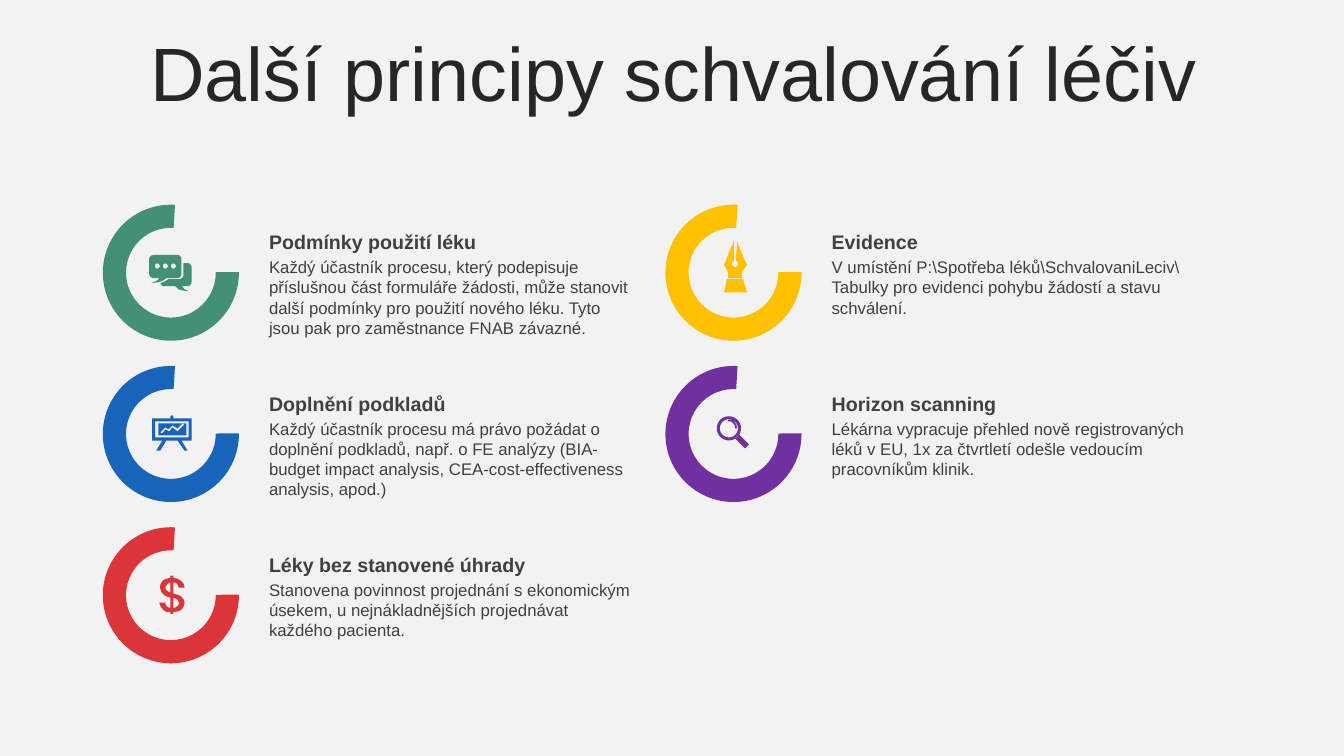
from dataclasses import dataclass
from math import cos, pi, sin

from pptx import Presentation
from pptx.dml.color import RGBColor
from pptx.enum.shapes import MSO_SHAPE
from pptx.enum.text import MSO_ANCHOR, MSO_AUTO_SIZE, PP_ALIGN
from pptx.util import Inches, Pt


@dataclass(frozen=True)
class Theme:
    """Colours, type and grid of the slide, lengths in inches."""
    font: str = "Arial"
    background: str = "F2F2F2"
    title_ink: str = "262626"
    ink: str = "404040"
    green: str = "449074"
    blue: str = "1764B9"
    red: str = "DC3539"
    yellow: str = "FFC000"
    purple: str = "7030A0"
    title_size: int = 54
    heading_size: int = 14
    body_size: int = 12
    left: float = 1.02
    top: float = 2.03
    column: float = 5.58
    row: float = 1.6
    ring: float = 1.35
    text_indent: float = 1.55
    text_width: float = 3.83


THEME = Theme()


def rect(left, top, right, bottom):
    """Return the corners of a rectangle."""
    return [(left, top), (right, top), (right, bottom), (left, bottom)]


def circle(x, y, radius, steps=36):
    """Return the points of a circle."""
    turns = [2 * pi * step / steps for step in range(steps)]
    return [(x + radius * cos(turn), y + radius * sin(turn)) for turn in turns]


def flatten(contour, steps=8):
    """Turn six-number Bézier entries of a contour into points."""
    points = []
    for entry in contour:
        if len(entry) == 2:
            points.append(entry)
            continue
        xs, ys = ((points[-1][axis], *entry[axis::2]) for axis in (0, 1))
        for step in range(1, steps + 1):
            t = step / steps
            weights = ((1 - t) ** 3, 3 * t * (1 - t) ** 2, 3 * t * t * (1 - t), t ** 3)
            points.append(tuple(sum(w * v for w, v in zip(weights, values))
                                for values in (xs, ys)))
    return points


SPEECH = [
    *[circle(x, 0.61, 0.025) for x in (0.54, 0.62, 0.7)],
    [(0.8, 0.58), (0.84, 0.58), (0.86, 0.58, 0.88, 0.6, 0.88, 0.62), (0.88, 0.77),
     (0.88, 0.79, 0.86, 0.81, 0.84, 0.81), (0.79, 0.81),
     (0.8, 0.83, 0.8, 0.84, 0.85, 0.86), (0.77, 0.85, 0.75, 0.85, 0.72, 0.81),
     (0.61, 0.81), (0.59, 0.81, 0.58, 0.8, 0.57, 0.78),
     (0.6, 0.77, 0.62, 0.76, 0.65, 0.74), (0.75, 0.74),
     (0.78, 0.74, 0.8, 0.72, 0.8, 0.7)],
    [(0.51, 0.5), (0.74, 0.5), (0.76, 0.5, 0.78, 0.52, 0.78, 0.54), (0.78, 0.69),
     (0.78, 0.71, 0.76, 0.73, 0.74, 0.73), (0.63, 0.73),
     (0.58, 0.77, 0.56, 0.77, 0.48, 0.78), (0.53, 0.76, 0.54, 0.76, 0.56, 0.73),
     (0.51, 0.73), (0.48, 0.73, 0.46, 0.71, 0.46, 0.69), (0.46, 0.54),
     (0.46, 0.52, 0.48, 0.5, 0.51, 0.5)],
]
BOARD = [
    [(0.57, 0.66), (0.62, 0.61), (0.65, 0.63), (0.69, 0.59), (0.74, 0.62),
     (0.79, 0.57), (0.81, 0.58), (0.74, 0.65), (0.69, 0.61), (0.66, 0.65),
     (0.62, 0.63), (0.59, 0.67)],
    rect(0.55, 0.57, 0.83, 0.69),
    rect(0.52, 0.55, 0.85, 0.71),
    [(0.69, 0.49), (0.7, 0.49, 0.7, 0.5, 0.7, 0.5), (0.7, 0.52), (0.88, 0.52),
     (0.88, 0.74), (0.78, 0.74), (0.84, 0.84), (0.81, 0.84), (0.74, 0.74),
     (0.63, 0.74), (0.57, 0.84), (0.53, 0.84), (0.59, 0.74), (0.49, 0.74),
     (0.49, 0.52), (0.67, 0.52), (0.67, 0.5), (0.67, 0.5, 0.68, 0.49, 0.69, 0.49)],
]
DOLLAR = [
    [(0.7, 0.7), (0.7, 0.8), (0.71, 0.8, 0.72, 0.8, 0.73, 0.79),
     (0.75, 0.78, 0.76, 0.76, 0.75, 0.74), (0.75, 0.72, 0.73, 0.71, 0.7, 0.7)],
    [(0.67, 0.55), (0.66, 0.55, 0.65, 0.55, 0.65, 0.56),
     (0.63, 0.57, 0.62, 0.59, 0.62, 0.61), (0.63, 0.63, 0.65, 0.64, 0.67, 0.65)],
    [(0.67, 0.48), (0.7, 0.48), (0.7, 0.5), (0.72, 0.51, 0.73, 0.51, 0.74, 0.51),
     (0.78, 0.53, 0.81, 0.56, 0.81, 0.6), (0.75, 0.6),
     (0.75, 0.58, 0.74, 0.56, 0.72, 0.55), (0.7, 0.55), (0.7, 0.66),
     (0.75, 0.67, 0.79, 0.68, 0.81, 0.74), (0.81, 0.77, 0.8, 0.81, 0.76, 0.83),
     (0.74, 0.84, 0.72, 0.84, 0.7, 0.84), (0.7, 0.86), (0.67, 0.86), (0.67, 0.84),
     (0.66, 0.84, 0.64, 0.84, 0.63, 0.84), (0.59, 0.82, 0.57, 0.79, 0.56, 0.75),
     (0.62, 0.75), (0.62, 0.77, 0.63, 0.79, 0.66, 0.8), (0.67, 0.8), (0.67, 0.7),
     (0.63, 0.69, 0.58, 0.67, 0.57, 0.61), (0.56, 0.58, 0.58, 0.54, 0.61, 0.52),
     (0.63, 0.51, 0.65, 0.51, 0.67, 0.5)],
]
PEN = [
    [(0.77, 0.74), (0.61, 0.74), (0.58, 0.87), (0.81, 0.87)],
    [(0.71, 0.36), (0.71, 0.43, 0.7, 0.49, 0.7, 0.56),
     (0.71, 0.56, 0.72, 0.57, 0.72, 0.59), (0.72, 0.6, 0.71, 0.62, 0.69, 0.62),
     (0.68, 0.62, 0.66, 0.6, 0.66, 0.59), (0.66, 0.57, 0.67, 0.56, 0.68, 0.56),
     (0.68, 0.36), (0.58, 0.6), (0.62, 0.65, 0.63, 0.69, 0.62, 0.73), (0.76, 0.73),
     (0.75, 0.68, 0.76, 0.66, 0.81, 0.6), (0.77, 0.52, 0.74, 0.44, 0.71, 0.36)],
]
MAGNIFIER = [
    circle(0.63, 0.62, 0.12),
    circle(0.63, 0.62, 0.09),
    [(0.62, 0.54), (0.64, 0.53, 0.67, 0.54, 0.68, 0.55),
     (0.7, 0.57, 0.71, 0.59, 0.71, 0.62), (0.69, 0.62),
     (0.69, 0.6, 0.69, 0.58, 0.67, 0.57), (0.66, 0.55, 0.64, 0.55, 0.62, 0.55)],
    [(0.73, 0.68), (0.82, 0.77), (0.83, 0.78, 0.83, 0.79, 0.82, 0.79), (0.8, 0.81),
     (0.8, 0.82, 0.79, 0.82, 0.78, 0.81), (0.69, 0.72)],
]


def paint(shape, color):
    """Give a shape a flat fill without line or shadow."""
    shape.shadow.inherit = False
    shape.fill.solid()
    shape.fill.fore_color.rgb = RGBColor.from_string(color)
    shape.line.fill.background()


def write(frame, text, size, color, bold=False):
    """Put text in a frame and format its runs."""
    frame.text = text
    frame.word_wrap = True
    for paragraph in frame.paragraphs:
        for run in paragraph.runs:
            run.font.name = THEME.font
            run.font.size = Pt(size)
            run.font.bold = bold
            run.font.color.rgb = RGBColor.from_string(color)


def add_title(slide, text):
    """Place and format the title."""
    title = slide.shapes.title
    title.left, title.top, title.width, title.height = map(Inches, (0.35, 0.37, 12.66, 0.79))
    frame = title.text_frame
    write(frame, text, THEME.title_size, THEME.title_ink)
    frame.auto_size = MSO_AUTO_SIZE.NONE
    frame.vertical_anchor = MSO_ANCHOR.MIDDLE
    frame.paragraphs[0].alignment = PP_ALIGN.CENTER
    frame.paragraphs[0].line_spacing = 0.9


def add_ring(slide, left, top, color):
    """Draw an open ring."""
    ring = slide.shapes.add_shape(MSO_SHAPE.BLOCK_ARC, Inches(left), Inches(top),
                                  Inches(THEME.ring), Inches(THEME.ring))
    ring.rotation = 270
    for index, value in enumerate((53.67, 2.07, 0.17)):
        ring.adjustments[index] = value
    paint(ring, color)


def add_icon(slide, left, top, contours, color):
    """Draw an icon from contours measured from the ring's corner."""
    outlines = [[(Inches(left + x), Inches(top + y)) for x, y in flatten(contour)]
                for contour in contours]
    builder = slide.shapes.build_freeform(*outlines[0][0])
    for index, outline in enumerate(outlines):
        if index:
            builder.move_to(*outline[0])
        builder.add_line_segments(outline[1:], close=True)
    paint(builder.convert_to_shape(), color)


def add_text(slide, left, top, height, text, size, bold=False):
    """Add a wrapped text box and return its frame."""
    box = slide.shapes.add_textbox(*map(Inches, (left, top, THEME.text_width, height)))
    write(box.text_frame, text, size, THEME.ink, bold)
    return box.text_frame


def add_principle(slide, column, row, color, icon, heading, body):
    """Add one principle with ring, icon, heading and body in its grid cell."""
    left = THEME.left + column * THEME.column
    top = THEME.top + row * THEME.row
    add_ring(slide, left, top, color)
    add_icon(slide, left, top, icon, color)
    text_left = left + THEME.text_indent
    frame = add_text(slide, text_left, top + 0.2, 0.34, heading, THEME.heading_size, True)
    frame.vertical_anchor = MSO_ANCHOR.MIDDLE
    add_text(slide, text_left, top + 0.47, 0.91, body, THEME.body_size)


def main():
    """Build and save the slide."""
    deck = Presentation()
    deck.slide_width, deck.slide_height = Inches(13.33), Inches(7.5)
    slide = deck.slides.add_slide(deck.slide_layouts[5])
    slide.background.fill.solid()
    slide.background.fill.fore_color.rgb = RGBColor.from_string(THEME.background)
    add_title(slide, "Další principy schvalování léčiv")
    principles = [
        (0, 0, THEME.green, SPEECH, "Podmínky použití léku",
         "Každý účastník procesu, který podepisuje příslušnou část formuláře žádosti, může "
         "stanovit další podmínky pro použití nového léku. Tyto jsou pak pro zaměstnance "
         "FNAB závazné."),
        (0, 1, THEME.blue, BOARD, "Doplnění podkladů",
         "Každý účastník procesu má právo požádat o doplnění podkladů, např. o FE analýzy "
         "(BIA-budget impact analysis, CEA-cost-effectiveness analysis, apod.)"),
        (0, 2, THEME.red, DOLLAR, "Léky bez stanovené úhrady",
         "Stanovena povinnost projednání s ekonomickým úsekem, u nejnákladnějších "
         "projednávat každého pacienta."),
        (1, 0, THEME.yellow, PEN, "Evidence",
         "V umístění P:\\Spotřeba léků\\SchvalovaniLeciv\\\n"
         "Tabulky pro evidenci pohybu žádostí a stavu schválení."),
        (1, 1, THEME.purple, MAGNIFIER, "Horizon scanning",
         "Lékárna vypracuje přehled nově registrovaných léků v EU, 1x za čtvrtletí odešle "
         "vedoucím pracovníkům klinik."),
    ]
    for principle in principles:
        add_principle(slide, *principle)
    deck.save("out.pptx")


if __name__ == "__main__":
    main()
